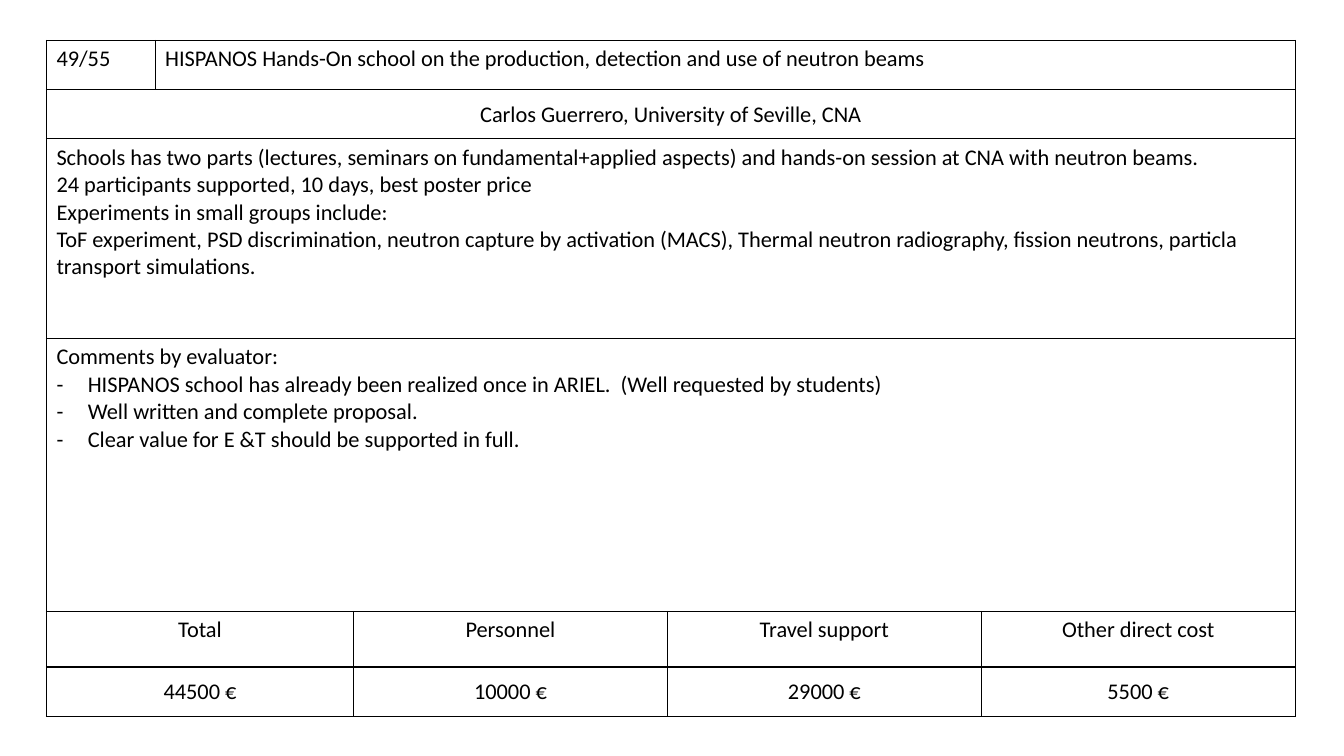
from lxml import etree
from pptx import Presentation
from pptx.dml.color import RGBColor
from pptx.enum import text as t
from pptx.oxml import ns
from pptx.util import Cm, Pt

BLACK = RGBColor(0, 0, 0)
WHITE = RGBColor(255, 255, 255)
FONT, SIZE = "Calibri", 16
COLS = [2.74, 5, 7.91, 7.91, 7.91]
ROWS = [1.24, 1.24, 5.03, 6.88, 1.4, 1.24]

TITLE = "HISPANOS Hands-On school on the production, detection and use of neutron beams"
AUTHOR = "Carlos Guerrero, University of Seville, CNA"
SUMMARY = [
    "Schools has two parts (lectures, seminars on fundamental+applied aspects) "
    "and hands-on session at CNA with neutron beams.\n"
    "24 participants supported, 10 days, best poster price",
    "Experiments in small groups include: \n"
    "ToF experiment, PSD discrimination, neutron capture by activation (MACS), "
    "Thermal neutron radiography, fission neutrons, particla transport simulations.",
]
NOTES = [
    "HISPANOS school has already been realized once in ARIEL.  (Well requested by students)",
    "Well written and complete proposal.",
    "Clear value for E &T should be supported in full.",
]
COSTS = [("Total", "44500 €"), ("Personnel", "10000 €"),
         ("Travel support", "29000 €"), ("Other direct cost", "5500 €")]


def add(parent, tag, **attrs):
    return etree.SubElement(parent, ns.qn(tag), attrs)


def write(cell, lines, center=False, middle=False, dash_from=None):
    """Fill a cell with paragraphs; those from dash_from on get a dash."""
    frame = cell.text_frame
    if middle:
        cell.vertical_anchor = t.MSO_ANCHOR.MIDDLE
        cell.margin_left = cell.margin_right = cell.margin_top = Cm(0.02)
        cell.margin_bottom = 0
    for i, line in enumerate(lines):
        par = frame.paragraphs[0] if i == 0 else frame.add_paragraph()
        par.text = line
        if center:
            par.alignment = t.PP_ALIGN.CENTER
        for run in par.runs:
            run.font.name, run.font.size = FONT, Pt(SIZE)
            run.font.color.rgb = BLACK
        for brk in par._p.findall(ns.qn("a:br")):
            add(brk, "a:rPr", sz=str(SIZE * 100))
        if dash_from is not None and i >= dash_from:
            props = par._p.get_or_add_pPr()
            props.set("marL", str(Cm(0.79)))
            props.set("indent", str(-Cm(0.79)))
            add(props, "a:buFont", typeface=FONT)
            add(props, "a:buChar", char="-")


def rule(cell):
    """White cell with thin black borders."""
    props = cell._tc.get_or_add_tcPr()
    for side in "LRTB":
        line = add(props, f"a:ln{side}", w=str(Pt(1)))
        fill = add(line, "a:solidFill")
        add(fill, "a:srgbClr", val=str(BLACK))
    cell.fill.solid()
    cell.fill.fore_color.rgb = WHITE


def form(slide, left, top):
    """Proposal form with its top left corner at the given place."""
    table = slide.shapes.add_table(len(ROWS), len(COLS), Cm(left), Cm(top),
                                   Cm(sum(COLS)), Cm(sum(ROWS))).table
    table.first_row = table.horz_banding = False
    for col, width in zip(table.columns, COLS):
        col.width = Cm(width)
    for row, height in zip(table.rows, ROWS):
        row.height = Cm(height)
    for cell in table.iter_cells():
        rule(cell)

    # Merged cells: row, first column, last column
    for row, first, last in [(0, 1, 4), (1, 0, 4), (2, 0, 4),
                             (3, 0, 4), (4, 0, 1), (5, 0, 1)]:
        table.cell(row, first).merge(table.cell(row, last))

    # Heading, summary and comments
    write(table.cell(0, 0), ["49/55"])
    write(table.cell(0, 1), [TITLE])
    write(table.cell(1, 0), [AUTHOR], center=True, middle=True)
    write(table.cell(2, 0), SUMMARY)
    write(table.cell(3, 0), ["Comments by evaluator:"] + NOTES, dash_from=1)

    # Costs
    for col, (label, sum_) in zip([0, 2, 3, 4], COSTS):
        write(table.cell(4, col), [label], center=True)
        write(table.cell(5, col), [sum_], center=True, middle=True)


def main():
    deck = Presentation()
    deck.slide_width, deck.slide_height = Cm(33.87), Cm(19.05)
    slide = deck.slides.add_slide(deck.slide_layouts[6])
    form(slide, 1.17, 1.02)
    deck.save("out.pptx")


if __name__ == "__main__":
    main()
